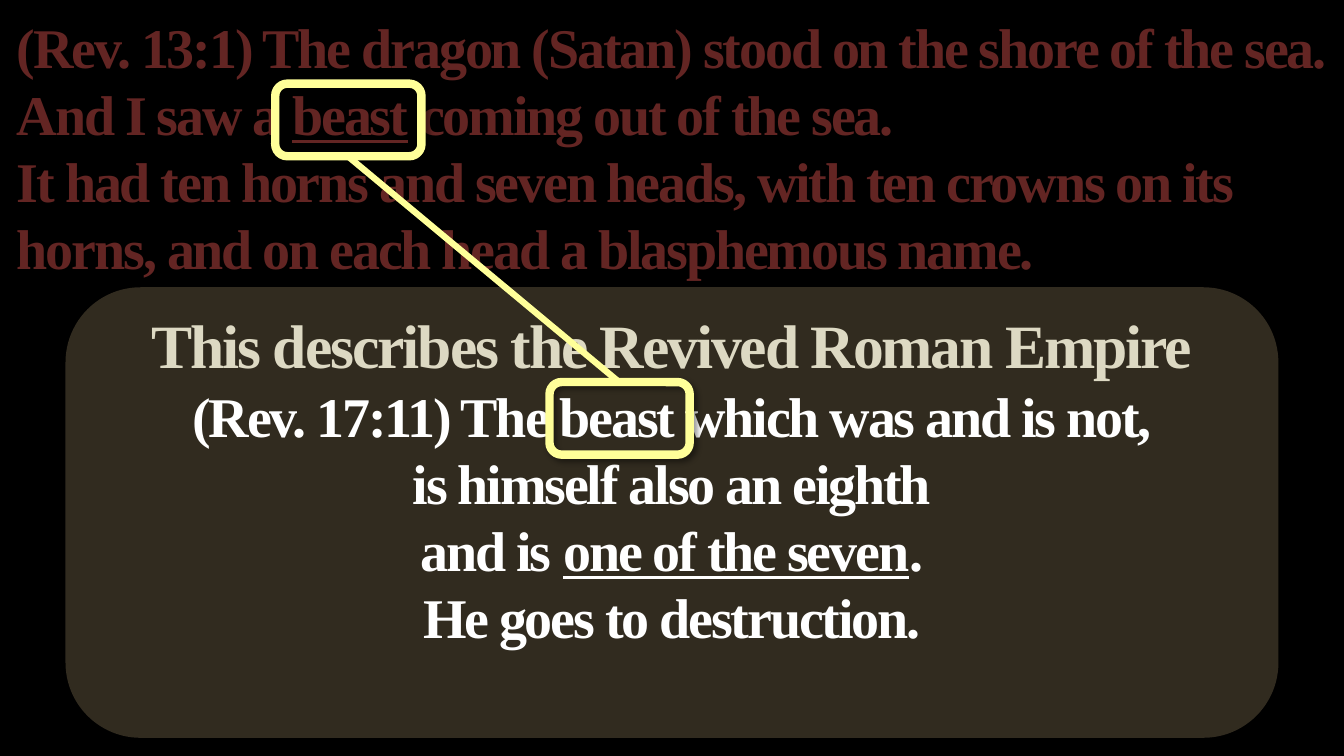
"""Build the slide on the beast of Revelation 13 and 17."""
import pptx
import pptx.dml.color
import pptx.enum.shapes
import pptx.enum.text
import pptx.oxml
import pptx.oxml.ns
import pptx.util

Inches = pptx.util.Inches
RGB = pptx.dml.color.RGBColor.from_string
ROUNDED = pptx.enum.shapes.MSO_SHAPE.ROUNDED_RECTANGLE
ALIGN = pptx.enum.text.PP_ALIGN
COLORS = {"back": "000000", "verse": "632523", "panel": "312B1F",
          "heading": "DDD9C3", "text": "FFFFFF", "mark": "FFFF99"}

VERSE = [
    [("(Rev. 13:1) The dragon (Satan) stood on the shore of the sea.", False)],
    [("And I saw a ", False), ("beast", True), (" coming out of the sea.", False)],
    [("It had ten horns and seven heads, with ten crowns on its horns, "
      "and on each head a blasphemous name.", False)],
]
HEADING = [[("This describes the Revived Roman Empire", False)]]
MEANING = [
    [("(Rev. 17:11) The beast which was and is not,", False)],
    [("is himself also an eighth", False)],
    [("and is ", False), ("one of the seven", True), (".", False)],
    [("He goes to destruction.", False)],
]


def add_lines(tf, lines, size, color, align):
    for line in lines:
        p = tf.add_paragraph() if tf.paragraphs[0].runs else tf.paragraphs[0]
        p.alignment = align
        for text, underline in line:
            r = p.add_run()
            r.text = text
            font = {"name": "Times New Roman", "size": pptx.util.Pt(size),
                    "bold": True, "underline": underline}
            for key, value in font.items():
                setattr(r.font, key, value)
            r.font.color.rgb = RGB(COLORS[color])
            r.font._element.set("spc", "-150")


def add_shadow(shape, opacity, blur, distance, angle):
    shape.shadow.inherit = False
    effects = shape._element.spPr.find(pptx.oxml.ns.qn("a:effectLst"))
    effects.append(pptx.oxml.parse_xml(
        f'<a:outerShdw {pptx.oxml.ns.nsdecls("a")} blurRad="{pptx.util.Pt(blur)}" '
        f'dist="{pptx.util.Pt(distance)}" dir="{angle * 60000}" rotWithShape="0">'
        f'<a:srgbClr val="000000"><a:alpha val="{opacity * 1000}"/></a:srgbClr>'
        '</a:outerShdw>'))


prs = pptx.Presentation()
prs.slide_width, prs.slide_height = Inches(13.33), Inches(7.5)
s = prs.slides.add_slide(prs.slide_layouts[6])
s.background.fill.solid()
s.background.fill.fore_color.rgb = RGB(COLORS["back"])

verse = s.shapes.add_textbox(Inches(0.07), Inches(0.07), Inches(13.27), Inches(2.79))
verse.text_frame.word_wrap = True
add_lines(verse.text_frame, VERSE, 40, "verse", ALIGN.LEFT)

panel = s.shapes.add_shape(ROUNDED, Inches(0.65), Inches(2.85), Inches(12.03), Inches(4.47))
panel.fill.solid()
panel.fill.fore_color.rgb = RGB(COLORS["panel"])
panel.line.fill.background()
add_shadow(panel, 32, 3.5, 2.2, 90)
tf = panel.text_frame
frame = {"word_wrap": True, "margin_bottom": Inches(0.72),
         "vertical_anchor": pptx.enum.text.MSO_ANCHOR.MIDDLE}
for key, value in frame.items():
    setattr(tf, key, value)
add_lines(tf, HEADING, 44, "heading", ALIGN.CENTER)
add_lines(tf, MEANING, 40, "text", ALIGN.CENTER)

for left, top, width in [(2.73, 0.83, 1.45), (5.45, 3.79, 1.39)]:
    mark = s.shapes.add_shape(ROUNDED, Inches(left), Inches(top), Inches(width), Inches(0.72))
    mark.fill.background()
    mark.line.color.rgb = RGB(COLORS["mark"])
    mark.line.width = pptx.util.Pt(6)
    add_shadow(mark, 40, 4, 3, 45)

link = s.shapes.add_connector(pptx.enum.shapes.MSO_CONNECTOR.STRAIGHT,
                              Inches(3.45), Inches(1.55), Inches(6.14), Inches(3.79))
link.line.color.rgb = RGB(COLORS["mark"])
link.line.width = pptx.util.Pt(4.5)
link._element.spPr.append(pptx.oxml.parse_xml(
    f'<a:effectLst {pptx.oxml.ns.nsdecls("a")}/>'))

prs.save("out.pptx")
